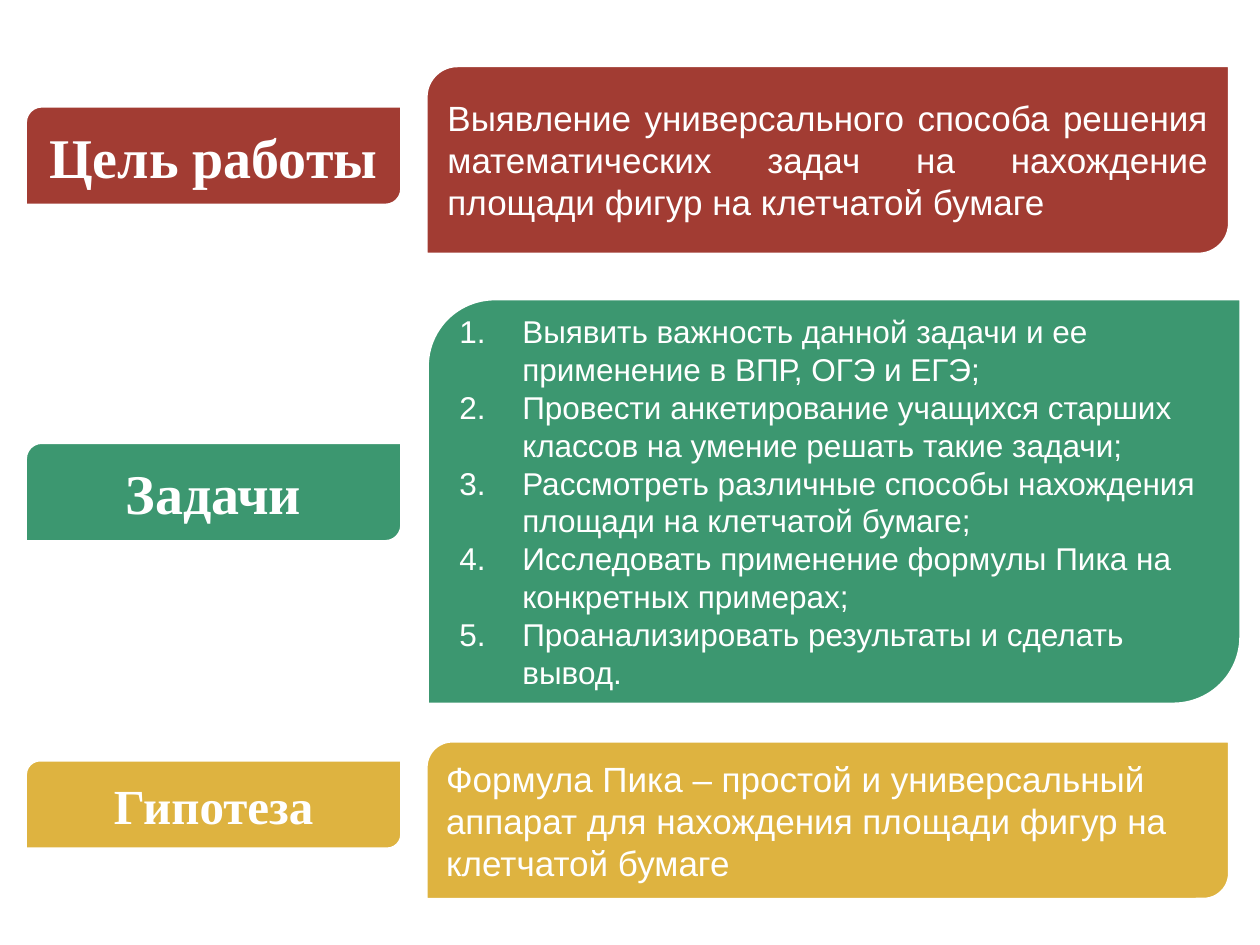
"""Build the slide with the aim, tasks and hypothesis of a study on areas on grid paper."""
import pptx
import pptx.dml.color
import pptx.enum.shapes
import pptx.enum.text
import pptx.oxml.ns
import pptx.util
from lxml import etree

Inches = pptx.util.Inches
Align = pptx.enum.text.PP_ALIGN
COLORS = {"aim": "A23C33", "tasks": "3C9770", "hypothesis": "DEB340", "white": "FFFFFF"}

deck = pptx.Presentation()
deck.slide_width, deck.slide_height = Inches(10), Inches(7.5)
slide = deck.slides.add_slide(deck.slide_layouts[6])


def add_panel(text, *, box, color, size, font="Arial", bold=False, align=Align.LEFT, numbered=False):
    """Add a panel with two rounded corners, one paragraph per line of text."""
    white = pptx.dml.color.RGBColor.from_string(COLORS["white"])
    panel = slide.shapes.add_shape(
        pptx.enum.shapes.MSO_SHAPE.ROUND_2_DIAG_RECTANGLE, *[Inches(length) for length in box]
    )
    panel.shadow.inherit = False
    panel.fill.solid()
    panel.fill.fore_color.rgb = pptx.dml.color.RGBColor.from_string(COLORS[color])
    panel.line.color.rgb = white
    panel.line.width = pptx.util.Pt(2)
    frame = panel.text_frame
    frame.word_wrap = True
    frame.vertical_anchor = pptx.enum.text.MSO_ANCHOR.MIDDLE
    frame.text = text
    for paragraph in frame.paragraphs:
        paragraph.alignment = align
        if numbered:
            properties = paragraph._p.get_or_add_pPr()
            properties.set("marL", str(Inches(0.5)))
            properties.set("indent", str(Inches(-0.5)))
            numbering = etree.SubElement(properties, pptx.oxml.ns.qn("a:buAutoNum"))
            numbering.set("type", "arabicPeriod")
        for run in paragraph.runs:
            run.font.name = font
            run.font.size = pptx.util.Pt(size)
            run.font.bold = bold
            run.font.color.rgb = white


tasks = [
    "Выявить важность данной задачи и ее применение в ВПР, ОГЭ и ЕГЭ;",
    "Провести анкетирование учащихся старших классов на умение решать такие задачи;",
    "Рассмотреть различные способы нахождения площади на клетчатой бумаге;",
    "Исследовать применение формулы Пика на конкретных примерах;",
    "Проанализировать результаты и сделать вывод.",
]
aim = (
    "Выявление универсального способа решения математических задач "
    "на нахождение площади фигур на клетчатой бумаге"
)
hypothesis = (
    "Формула Пика – простой и универсальный аппарат "
    "для нахождения площади фигур на клетчатой бумаге"
)

headings = [
    ("Задачи", "tasks", 3.51, 0.79, 32),
    ("Цель работы", "aim", 0.84, 0.79, 32),
    ("Гипотеза", "hypothesis", 6.03, 0.71, 28),
]
for heading, color, top, height, size in headings:
    add_panel(heading, box=(0.2, top, 2.99, height), color=color, size=size,
              font="Times New Roman", bold=True, align=Align.CENTER)

add_panel("\n".join(tasks), box=(3.39, 2.37, 6.46, 3.22), color="tasks", size=18, numbered=True)
add_panel(aim, box=(3.38, 0.52, 6.38, 1.5), color="aim", size=20, align=Align.JUSTIFY)
add_panel(hypothesis, box=(3.38, 5.88, 6.38, 1.26), color="hypothesis", size=20)

deck.save("out.pptx")
